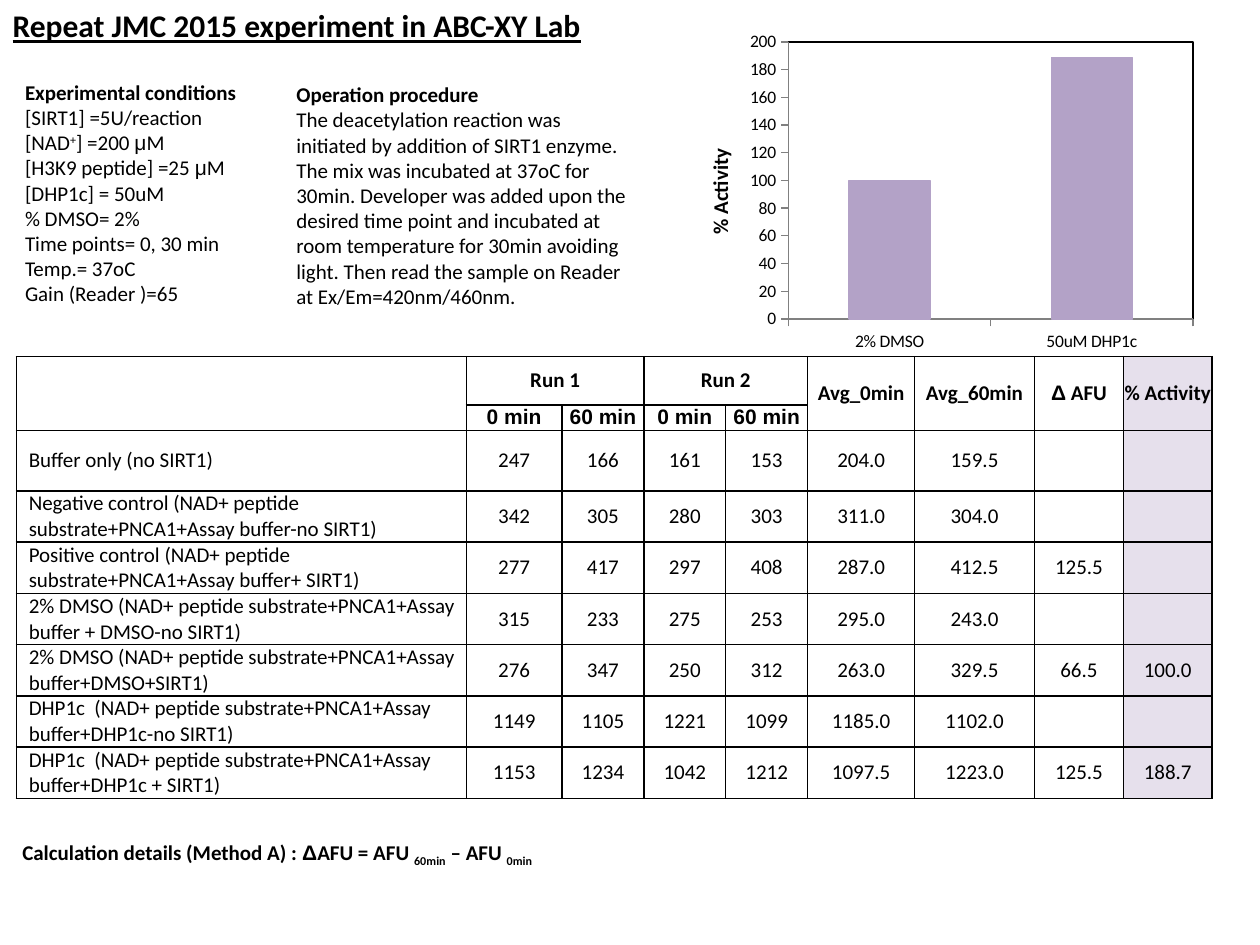
from lxml.etree import SubElement
from pptx import Presentation
from pptx.chart.data import CategoryChartData
from pptx.dml.color import RGBColor
from pptx.enum.chart import XL_CHART_TYPE, XL_TICK_MARK
from pptx.enum.text import MSO_ANCHOR, MSO_AUTO_SIZE, PP_ALIGN
from pptx.oxml import parse_xml
from pptx.oxml.ns import nsdecls, qn
from pptx.util import Cm, Pt

BLACK = RGBColor(0x00, 0x00, 0x00)
AXIS_GRAY = RGBColor(0x80, 0x80, 0x80)
PURPLE = RGBColor(0xB3, 0xA2, 0xC7)
LILAC = RGBColor(0xE6, 0xE0, 0xEC)

CONDITIONS = [
    "[SIRT1] =5U/reaction",
    [("[NAD",), ("+", None, 30), ("] =200 ",), ("μ", "Arial"), ("M",)],
    [("[H3K9 peptide] =25 ",), ("μ", "Arial"), ("M",)],
    "[DHP1c] = 50uM",
    "% DMSO= 2%",
    "Time points= 0, 30 min",
    "Temp.= 37oC",
    "Gain (Reader )=65",
]
PROCEDURE = [
    "The deacetylation reaction was initiated by addition of SIRT1 enzyme. "
    "The mix was incubated at 37oC for 30min. Developer was added upon the "
    "desired time point and incubated at room temperature for 30min avoiding "
    "light. Then read the sample on Reader at Ex/Em=420nm/460nm."
]
CALCULATION = [("Calculation details (Method A) : ",), ("Δ", "Arial"), ("AFU = AFU ",),
               ("60min", None, -25), (" – AFU ",), ("0min", None, -25)]

COLUMN_WIDTHS = [9.07, 1.93, 1.65, 1.65, 1.65, 2.16, 2.41, 1.8, 1.78]
ROW_HEIGHTS = [0.97, 0.48, 1.22] + [1.02] * 6
GROUP_HEADS = ["", "Run 1", "", "Run 2", "", "Avg_0min", "Avg_60min",
               [("Δ", "Arial"), (" AFU",)], "% Activity"]
TIME_HEADS = [""] + ["0 min", "60 min"] * 2 + [""] * 4
MEASUREMENTS = [
    ["Buffer only (no SIRT1)", "247", "166", "161", "153", "204.0", "159.5", "", ""],
    ["Negative control (NAD+ peptide substrate+PNCA1+Assay buffer-no SIRT1)",
     "342", "305", "280", "303", "311.0", "304.0", "", ""],
    ["Positive control (NAD+ peptide substrate+PNCA1+Assay buffer+ SIRT1)",
     "277", "417", "297", "408", "287.0", "412.5", "125.5", ""],
    ["2% DMSO (NAD+ peptide substrate+PNCA1+Assay buffer + DMSO-no SIRT1)",
     "315", "233", "275", "253", "295.0", "243.0", "", ""],
    ["2% DMSO (NAD+ peptide substrate+PNCA1+Assay buffer+DMSO+SIRT1)",
     "276", "347", "250", "312", "263.0", "329.5", "66.5", "100.0"],
    ["DHP1c  (NAD+ peptide substrate+PNCA1+Assay buffer+DHP1c-no SIRT1)",
     "1149", "1105", "1221", "1099", "1185.0", "1102.0", "", ""],
    ["DHP1c  (NAD+ peptide substrate+PNCA1+Assay buffer+DHP1c + SIRT1)",
     "1153", "1234", "1042", "1212", "1097.5", "1223.0", "125.5", "188.7"],
]


def style_font(font, size=12, bold=False, name="Calibri"):
    font.name, font.size, font.bold = name, Pt(size), bold
    font.color.rgb = BLACK


def write_line(paragraph, content, size=12, bold=False, name="Calibri",
               align=PP_ALIGN.LEFT):
    """Content is a string or a list of (text, font name, baseline percent)."""
    style_font(paragraph.font, size, bold, name)
    paragraph.alignment = align
    paragraph.space_before = Pt(0)
    pieces = [(content,)] if isinstance(content, str) else content
    for text, *changes in pieces:
        if not text:
            continue
        run = paragraph.add_run()
        run.text = text
        if changes and changes[0]:
            run.font.name = changes[0]
        if len(changes) > 1:
            run._r.get_or_add_rPr().set("baseline", str(changes[1] * 1000))


def place(part, left, top, width, height):
    part.left, part.top, part.width, part.height = map(Cm, (left, top, width, height))


def add_heading(slide, box):
    heading = slide.shapes.title
    place(heading, *box)
    frame = heading.text_frame
    frame.word_wrap, frame.auto_size = False, MSO_AUTO_SIZE.NONE
    frame.vertical_anchor = MSO_ANCHOR.TOP
    write_line(frame.paragraphs[0], "Repeat JMC 2015 experiment in ABC-XY Lab", 18, True)
    frame.paragraphs[0].font.underline = True


def add_notes_column(column, box, heading, lines, wrap):
    place(column, *box)
    frame = column.text_frame
    frame.word_wrap, frame.auto_size = wrap, MSO_AUTO_SIZE.NONE
    for index, line in enumerate([heading] + lines):
        paragraph = frame.add_paragraph() if index else frame.paragraphs[0]
        write_line(paragraph, line, bold=index == 0)
        properties = paragraph._p.get_or_add_pPr()
        properties.set("marL", "0")
        properties.set("indent", "0")
        properties.insert_element_before(
            parse_xml(f"<a:buNone {nsdecls('a')}/>"), "a:tabLst", "a:defRPr", "a:extLst")


def add_activity_chart(slide, box):
    activity = CategoryChartData()
    activity.categories = ["2% DMSO", "50uM DHP1c"]
    activity.add_series("Series 1", [100, 189])
    chart = slide.shapes.add_chart(
        XL_CHART_TYPE.COLUMN_CLUSTERED, *map(Cm, box), activity).chart
    chart.has_legend = chart.has_title = False
    style_font(chart.font, 10)

    # Bars
    plot = chart.plots[0]
    plot.gap_width, plot.vary_by_categories = 150, False
    bars = plot.series[0].format
    bars.fill.solid()
    bars.fill.fore_color.rgb = bars.line.color.rgb = PURPLE
    bars.line.width = Pt(0.75)

    # Axes
    for axis in (chart.category_axis, chart.value_axis):
        axis.has_major_gridlines = False
        axis.major_tick_mark = XL_TICK_MARK.OUTSIDE
        axis.format.line.color.rgb = AXIS_GRAY
        style_font(axis.tick_labels.font, 10)
    scale = chart.value_axis
    scale.minimum_scale, scale.maximum_scale, scale.major_unit = 0, 200, 20
    write_line(scale.axis_title.text_frame.paragraphs[0], "% Activity", bold=True,
               align=PP_ALIGN.CENTER)

    # Plot frame: position as shares of the chart, and a thin outline
    plot_area = chart._chartSpace.chart.plotArea
    for old in plot_area.findall(qn("c:layout")):
        plot_area.remove(old)
    settings = [("layoutTarget", "inner"), ("xMode", "edge"), ("yMode", "edge"),
                ("x", 0.21), ("y", 0.05), ("w", 0.77), ("h", 0.83)]
    layout = parse_xml(f"<c:layout {nsdecls('c')}><c:manualLayout/></c:layout>")
    for tag, value in settings:
        SubElement(layout[0], qn(f"c:{tag}")).set("val", str(value))
    plot_area.insert(0, layout)
    plot_area.append(parse_xml(
        f"<c:spPr {nsdecls('c', 'a')}><a:noFill/><a:ln w='9525'><a:solidFill>"
        f"<a:srgbClr val='{BLACK}'/></a:solidFill></a:ln></c:spPr>"))


def set_borders(cell):
    properties = cell._tc.get_or_add_tcPr()
    for position, side in enumerate(("lnL", "lnR", "lnT", "lnB")):
        properties.insert(position, parse_xml(
            f"<a:{side} {nsdecls('a')} w='12700'><a:solidFill>"
            f"<a:srgbClr val='{BLACK}'/></a:solidFill></a:{side}>"))


def add_results_table(slide, left, top):
    rows = [GROUP_HEADS, TIME_HEADS] + MEASUREMENTS
    table = slide.shapes.add_table(
        len(rows), len(COLUMN_WIDTHS), Cm(left), Cm(top),
        Cm(sum(COLUMN_WIDTHS)), Cm(sum(ROW_HEIGHTS))).table
    table.first_row = table.horz_banding = False
    for column, width in zip(table.columns, COLUMN_WIDTHS):
        column.width = Cm(width)
    for row, height in zip(table.rows, ROW_HEIGHTS):
        row.height = Cm(height)

    last = len(COLUMN_WIDTHS) - 1
    for r, row in enumerate(rows):
        for c, content in enumerate(row):
            cell = table.cell(r, c)
            label = c == 0 and r > 1
            cell.margin_left = Cm(0.25 if label else 0)
            cell.margin_right = cell.margin_top = cell.margin_bottom = 0
            cell.vertical_anchor = MSO_ANCHOR.MIDDLE
            write_line(cell.text_frame.paragraphs[0], content, bold=r < 2,
                       name="Arial" if r == 1 else "Calibri",
                       align=PP_ALIGN.LEFT if label else PP_ALIGN.CENTER)
            if c == last:
                cell.fill.solid()
                cell.fill.fore_color.rgb = LILAC
            else:
                cell.fill.background()
            set_borders(cell)

    # Header spans: two runs across, the other heads down
    for c in (1, 3):
        table.cell(0, c).merge(table.cell(0, c + 1))
    for c in (0, 5, 6, 7, 8):
        table.cell(0, c).merge(table.cell(1, c))


def add_calculation(slide, box):
    frame = slide.shapes.add_textbox(*map(Cm, box)).text_frame
    frame.word_wrap = True
    write_line(frame.paragraphs[0], CALCULATION, bold=True)


def main():
    deck = Presentation()
    deck.slide_width, deck.slide_height = Cm(25.4), Cm(19.05)
    slide = deck.slides.add_slide(deck.slide_layouts[3])
    conditions, procedure = slide.placeholders[1], slide.placeholders[2]
    add_heading(slide, (0, 0, 12.24, 1.02))
    add_notes_column(conditions, (0.25, 1.47, 4.83, 4.88),
                     "Experimental conditions", CONDITIONS, False)
    add_results_table(slide, 0.33, 7.19)
    add_activity_chart(slide, (13.67, 0.51, 10.59, 6.73))
    add_notes_column(procedure, (5.72, 1.52, 7.21, 4.88),
                     "Operation procedure", PROCEDURE, True)
    add_calculation(slide, (0.2, 16.79, 23.93, 0.76))
    deck.save("out.pptx")


if __name__ == "__main__":
    main()
